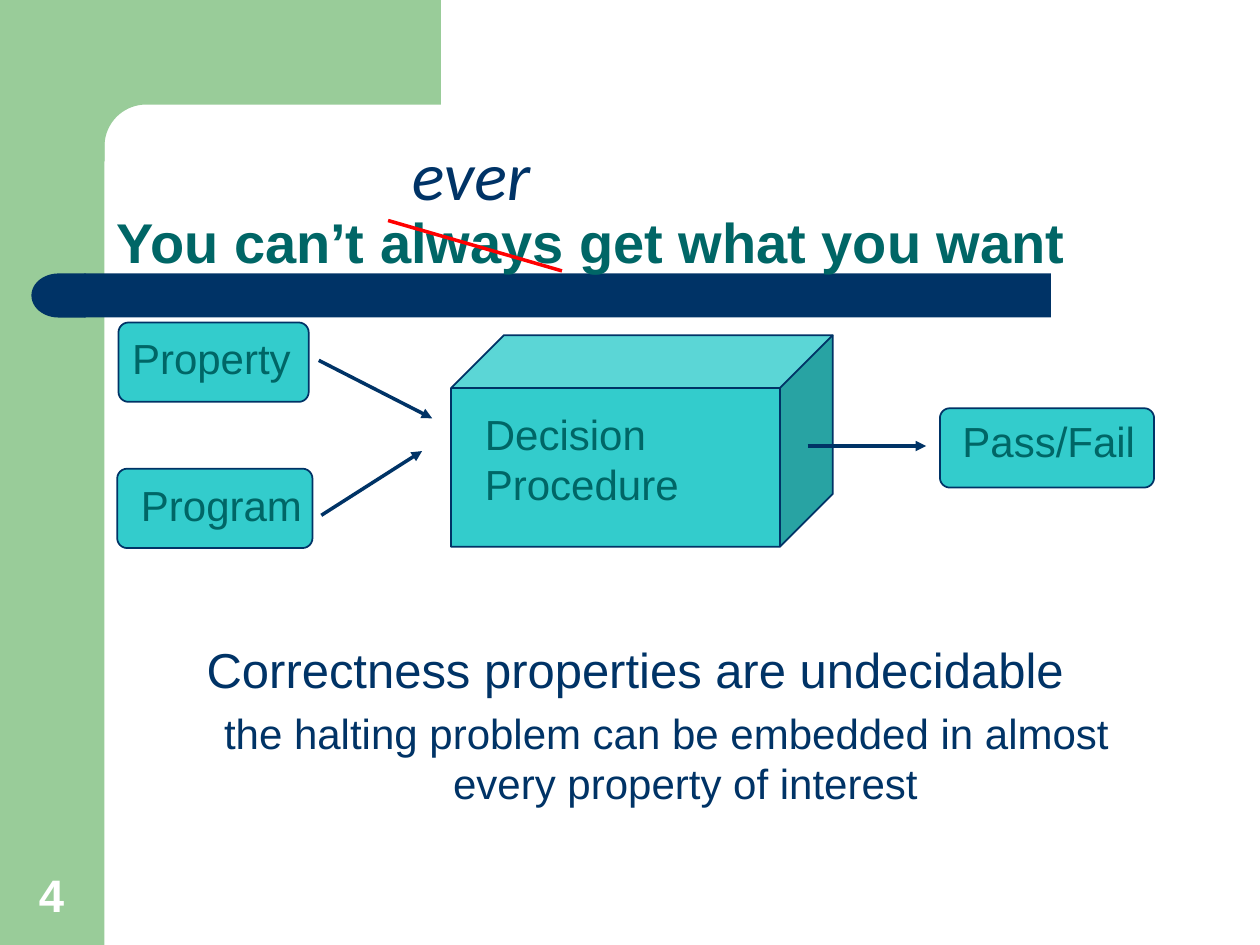
import math

import lxml.etree
import pptx
import pptx.dml.color
import pptx.enum.shapes
import pptx.enum.text
import pptx.oxml.ns
import pptx.util

COLORS = {
    "green": "99CC99",
    "navy": "003366",
    "teal": "006666",
    "turquoise": "33CCCC",
    "red": "FF0000",
    "white": "FFFFFF",
}
COLUMNS, ROWS = 100, 75
SLIDE_WIDTH = pptx.util.Inches(10)
SLIDE_HEIGHT = pptx.util.Inches(7.5)

SHAPE = pptx.enum.shapes.MSO_SHAPE
ALIGN = pptx.enum.text.PP_ALIGN
ANCHOR = pptx.enum.text.MSO_ANCHOR


def across(columns):
    return round(SLIDE_WIDTH * columns / COLUMNS)


def down(rows):
    return round(SLIDE_HEIGHT * rows / ROWS)


def place(left, top, width, height):
    return across(left), down(top), across(width), down(height)


def color(name):
    return pptx.dml.color.RGBColor.from_string(COLORS[name])


def paint(shape, fill, line=None):
    shape.shadow.inherit = False
    shape.fill.solid()
    shape.fill.fore_color.rgb = color(fill)
    if line:
        shape.line.color.rgb = color(line)
        shape.line.width = pptx.util.Pt(1)
    else:
        shape.line.fill.background()


def add_block(slide, kind, box, fill, line=None, rounding=None):
    shape = slide.shapes.add_shape(kind, *place(*box))
    if rounding is not None:
        shape.adjustments[0] = rounding
    paint(shape, fill, line)
    return shape


def add_corner(slide):
    """Draw the top band, whose inner corner is a quarter circle."""
    center, radius = 11.6, 3.3
    angles = [math.radians(step * 5) for step in range(19)]
    arc = [(center - radius * math.sin(a), center - radius * math.cos(a)) for a in angles]
    outline = [(35, 0), (35, 8.3), *arc, (8.3, 12.8), (5, 12.8), (5, 0)]
    points = [(across(x), down(y)) for x, y in outline]
    builder = slide.shapes.build_freeform(*points[0], scale=1.0)
    builder.add_line_segments(points[1:], close=True)
    paint(builder.convert_to_shape(), "green")


def add_text(slide, box, lines, size, font_color, font="Arial", bold=False,
             italic=False, wrap=False, align=ALIGN.LEFT, anchor=ANCHOR.TOP):
    frame = slide.shapes.add_textbox(*place(*box)).text_frame
    frame.word_wrap = wrap
    frame.vertical_anchor = anchor
    for index, line in enumerate(lines):
        paragraph = frame.add_paragraph() if index else frame.paragraphs[0]
        paragraph.alignment = align
        run = paragraph.add_run()
        run.text = line
        run.font.name = font
        run.font.size = pptx.util.Pt(size)
        run.font.bold = bold
        run.font.italic = italic
        run.font.color.rgb = color(font_color)
    return frame


def set_indent(paragraph, margin, hanging):
    properties = paragraph._p.get_or_add_pPr()
    properties.set("marL", str(across(margin)))
    properties.set("indent", str(-across(hanging)))


def add_line(slide, start, end, line_color, arrow=False):
    connector = slide.shapes.add_connector(
        pptx.enum.shapes.MSO_CONNECTOR.STRAIGHT,
        across(start[0]), down(start[1]), across(end[0]), down(end[1]))
    connector.line.color.rgb = color(line_color)
    connector.line.width = pptx.util.Pt(2)
    if arrow:
        line = connector.line._get_or_add_ln()
        lxml.etree.SubElement(line, pptx.oxml.ns.qn("a:tailEnd"), type="triangle")
    lxml.etree.SubElement(connector._element.spPr, pptx.oxml.ns.qn("a:effectLst"))


def add_frame(slide):
    add_block(slide, SHAPE.RECTANGLE, (0, 0, 8.3, ROWS), "green")
    add_corner(slide)
    add_block(slide, SHAPE.RECTANGLE, (6.7, 21.7, 76.7, 3.5), "navy")
    cap = add_block(slide, SHAPE.FLOWCHART_DELAY, (2.5, 21.7, 4.3, 3.5), "navy")
    cap._element.spPr.xfrm.set("flipH", "1")
    add_text(slide, (0.9, 68.3, 6.4, 5.3), ["4"], 26, "white", bold=True,
             align=ALIGN.CENTER, anchor=ANCHOR.BOTTOM)


def add_title(slide):
    frame = add_text(slide, (8.3, 14.8, 86.7, 9.4), ["You can’t always get what you want"],
                     32, "teal", bold=True, wrap=True, anchor=ANCHOR.MIDDLE)
    frame.paragraphs[0].line_spacing = 0.9


def add_conclusion(slide):
    frame = add_text(
        slide, (7.9, 50.3, 85, 21.4),
        ["Correctness properties are undecidable",
         "the halting problem can be embedded in almost every property of interest"],
        28, "navy", wrap=True, align=ALIGN.CENTER)
    claim, reason = frame.paragraphs
    set_indent(claim, 3.7, 3.7)
    set_indent(reason, 8, 3)
    reason.level = 1
    reason.space_before = pptx.util.Pt(5)
    reason.runs[0].font.size = pptx.util.Pt(24)


def add_diagram(slide):
    add_block(slide, SHAPE.CUBE, (35.8, 26.6, 30.3, 16.8), "turquoise", "navy", 0.25)
    add_text(slide, (37.5, 31.9, 17.4, 9), ["Decision", "Procedure"], 24, "teal")
    labelled_boxes = [
        ("Property", (9.4, 25.6, 15.1, 6.3), (9.5, 25.9, 14.6, 5)),
        ("Program", (9.3, 37.2, 15.5, 6.3), (10.2, 37.6, 14.8, 5)),
        ("Pass/Fail", (74.6, 32.4, 17, 6.3), (75.4, 32.5, 15.7, 5)),
    ]
    for label, box, label_box in labelled_boxes:
        add_block(slide, SHAPE.ROUNDED_RECTANGLE, box, "turquoise", "navy", 0.125)
        add_text(slide, label_box, [label], 24, "teal")
    arrows = [
        ((25.3, 28.6), (34.3, 33.2)),
        ((25.5, 40.9), (33.5, 35.8)),
        ((64.1, 35.4), (73.5, 35.4)),
    ]
    for start, end in arrows:
        add_line(slide, start, end, "navy", arrow=True)


def add_correction(slide):
    add_line(slide, (30.8, 17.5), (44.6, 21.5), "red")
    add_text(slide, (31.7, 10, 12.5, 7.5), ["ever"], 39, "navy", font="Calibri", italic=True)


def main():
    presentation = pptx.Presentation()
    presentation.slide_width = SLIDE_WIDTH
    presentation.slide_height = SLIDE_HEIGHT
    slide = presentation.slides.add_slide(presentation.slide_layouts[6])
    add_frame(slide)
    add_title(slide)
    add_conclusion(slide)
    add_diagram(slide)
    add_correction(slide)
    presentation.save("out.pptx")


if __name__ == "__main__":
    main()
